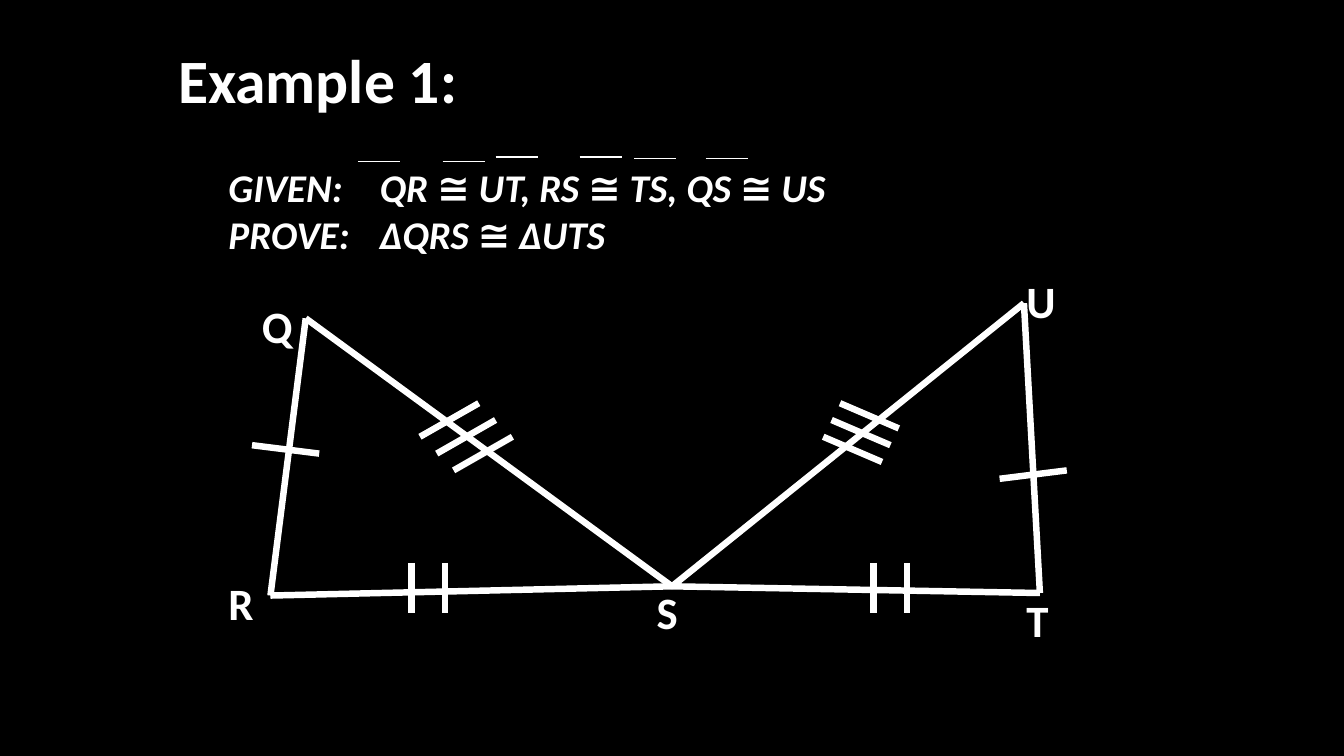
from dataclasses import dataclass

from lxml.etree import SubElement
from pptx import Presentation
from pptx.dml.color import RGBColor
from pptx.enum.shapes import MSO_CONNECTOR
from pptx.enum.text import MSO_ANCHOR, MSO_AUTO_SIZE, PP_ALIGN
from pptx.oxml.ns import qn
from pptx.util import Inches, Pt


@dataclass(frozen=True)
class Theme:
    background: RGBColor = RGBColor(0, 0, 0)
    ink: RGBColor = RGBColor(255, 255, 255)
    font: str = "Calibri"
    title_size: int = 44
    statement_size: int = 28
    label_size: int = 32
    figure_line: float = 4.63
    overbar_line: float = 1


THEME = Theme()

# The slide is a grid of 160 columns by 90 rows
COLUMNS, ROWS = 160, 90
SLIDE_WIDTH, SLIDE_HEIGHT = Inches(13.33), Inches(7.5)

STATEMENTS = ["GIVEN:\tQR ≅ UT, RS ≅ TS, QS ≅ US", "PROVE:\tΔQRS ≅ ΔUTS"]
STATEMENT_TAB = Inches(1.28)

VERTICES = {
    "Q": (36.4, 37.9),
    "R": (32.2, 70.9),
    "S": (80, 69.8),
    "T": (123.8, 70.6),
    "U": (121.9, 36.1),
}
SIDES = ["SR", "QR", "QS", "UT", "US", "ST"]
LABEL_CORNERS = {"Q": (30, 35), "R": (26, 68), "S": (77, 69),
                 "T": (121, 70), "U": (121, 32)}

# Congruence marks: first start, stroke, step to the next, count
TICKS = [
    ((30, 53), (8, 1), (0, 0), 1),       # QR
    ((119, 57), (8, -1), (0, 0), 1),     # UT
    ((49, 67), (0, 6), (4, 0), 2),       # RS
    ((104, 67), (0, 6), (4, 0), 2),      # TS
    ((50, 52), (7, -4), (2, 2), 3),      # QS
    ((100, 48), (7, 3), (-1, 2), 3),     # US
]

OVERBAR_WIDTH = 5
OVERBARS = [(42.6, 19.2), (52.7, 19.2), (59, 18.7),
            (69, 18.7), (75.5, 18.85), (84, 18.85)]


def across(columns):
    return round(SLIDE_WIDTH * columns / COLUMNS)


def down(rows):
    return round(SLIDE_HEIGHT * rows / ROWS)


def place(holder, column, row, width, height):
    holder.left, holder.top = across(column), down(row)
    holder.width, holder.height = across(width), down(height)


def write(holder, lines, size, italic=False, tab=None):
    frame = holder.text_frame
    frame.word_wrap = True
    frame.auto_size = MSO_AUTO_SIZE.NONE
    frame.vertical_anchor = MSO_ANCHOR.TOP
    for index, line in enumerate(lines):
        paragraph = frame.paragraphs[0] if index == 0 else frame.add_paragraph()
        paragraph.text = line
        paragraph.alignment = PP_ALIGN.LEFT
        paragraph.space_before = Pt(0)
        if tab:
            properties = paragraph._p.get_or_add_pPr()
            properties.set("marL", "0")
            properties.set("indent", "0")
            SubElement(properties, qn("a:buNone"))
            stops = SubElement(properties, qn("a:tabLst"))
            SubElement(stops, qn("a:tab"), pos=str(tab), algn="l")
        font = paragraph.font
        font.name, font.size = THEME.font, Pt(size)
        font.bold, font.italic = True, italic
        font.color.rgb = THEME.ink


def add_segment(slide, start, end, weight):
    segment = slide.shapes.add_connector(
        MSO_CONNECTOR.STRAIGHT,
        across(start[0]), down(start[1]), across(end[0]), down(end[1]))
    segment.line.color.rgb = THEME.ink
    segment.line.width = Pt(weight)
    SubElement(segment._element.spPr, qn("a:effectLst"))


def add_ticks(slide, first, stroke, step, count):
    for number in range(count):
        column = first[0] + number * step[0]
        row = first[1] + number * step[1]
        add_segment(slide, (column, row), (column + stroke[0], row + stroke[1]),
                    THEME.figure_line)


def add_label(slide, letter, column, row):
    label = slide.shapes.add_textbox(
        across(column), down(row), across(7), down(7.5))
    write(label, [letter], THEME.label_size)


def main():
    presentation = Presentation()
    presentation.slide_width, presentation.slide_height = SLIDE_WIDTH, SLIDE_HEIGHT
    slide = presentation.slides.add_slide(presentation.slide_layouts[1])
    slide.background.fill.solid()
    slide.background.fill.fore_color.rgb = THEME.background

    # Heading and statements
    heading, statements = slide.placeholders
    place(heading, 20, 4.4, 49, 10)
    write(heading, ["Example 1:"], THEME.title_size)
    place(statements, 26, 18.8, 114, 13)
    write(statements, STATEMENTS, THEME.statement_size, True, STATEMENT_TAB)

    # Segment bars above the given pairs
    for column, row in OVERBARS:
        add_segment(slide, (column, row), (column + OVERBAR_WIDTH, row),
                    THEME.overbar_line)

    # Triangles with their congruence marks
    for start, end in SIDES:
        add_segment(slide, VERTICES[start], VERTICES[end], THEME.figure_line)
    for tick_group in TICKS:
        add_ticks(slide, *tick_group)

    # Vertex letters
    for letter, corner in LABEL_CORNERS.items():
        add_label(slide, letter, *corner)

    presentation.save("out.pptx")


if __name__ == "__main__":
    main()
